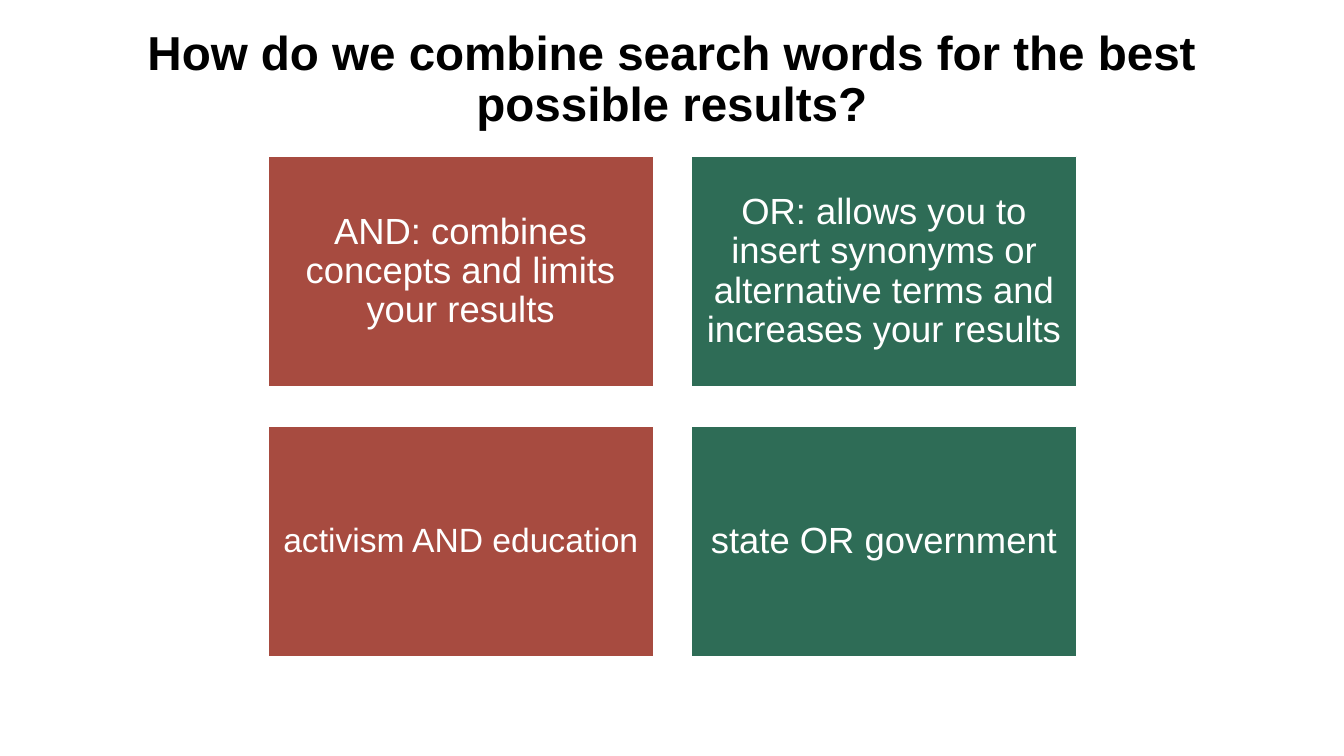
from pptx import Presentation
from pptx.dml.color import RGBColor
from pptx.enum.shapes import MSO_SHAPE as Shape
from pptx.enum.text import MSO_ANCHOR as Anchor, MSO_AUTO_SIZE as AutoSize, PP_ALIGN as Align
from pptx.util import Inches, Pt

BLACK = RGBColor(0x00, 0x00, 0x00)
WHITE = RGBColor(0xFF, 0xFF, 0xFF)
RED = RGBColor(0xA7, 0x4B, 0x40)
GREEN = RGBColor(0x2E, 0x6C, 0x56)

TITLE = "How do we combine search words for the best possible results?"
COLUMN_COLORS = [RED, GREEN]
# Each row holds the text and font size of its cards, left to right.
CARD_ROWS = [
    [("AND: combines concepts and limits your results", 26),
     ("OR: allows you to insert synonyms or alternative terms and increases your results", 26)],
    [("activism AND education", 24), ("state OR government", 26)],
]
CARD_WIDTH, CARD_HEIGHT = 3.82, 2.29
COLUMN_STEP, ROW_STEP = 4.2, 2.68


def write_text(shape, text, size, color, bold=False):
    frame = shape.text_frame
    frame.word_wrap = True
    frame.auto_size = AutoSize.NONE
    frame.vertical_anchor = Anchor.MIDDLE
    para = frame.paragraphs[0]
    para.text = text
    para.alignment = Align.CENTER
    para.line_spacing = 0.9
    para.font.name = "Arial"
    para.font.size = Pt(size)
    para.font.bold = bold
    para.font.color.rgb = color


def place_title(slide, left, top, width, height):
    title = slide.shapes.title
    title.left, title.top = Inches(left), Inches(top)
    title.width, title.height = Inches(width), Inches(height)
    write_text(title, TITLE, 34, BLACK, bold=True)


def add_card(slide, left, top, text, size, color):
    card = slide.shapes.add_shape(Shape.RECTANGLE, Inches(left), Inches(top),
                                  Inches(CARD_WIDTH), Inches(CARD_HEIGHT))
    card.shadow.inherit = False
    card.fill.solid()
    card.fill.fore_color.rgb = color
    card.line.color.rgb = WHITE
    card.line.width = Pt(1)
    frame = card.text_frame
    frame.margin_left = frame.margin_right = Inches(0.1)
    frame.margin_top = frame.margin_bottom = Inches(0.1)
    write_text(card, text, size, WHITE)


def add_card_grid(slide, left, top):
    for row, cards in enumerate(CARD_ROWS):
        for column, (text, size) in enumerate(cards):
            add_card(slide, left + column * COLUMN_STEP, top + row * ROW_STEP,
                     text, size, COLUMN_COLORS[column])


def main():
    deck = Presentation()
    deck.slide_width, deck.slide_height = Inches(13.33), Inches(7.5)
    slide = deck.slides.add_slide(deck.slide_layouts.get_by_name("Title Only"))
    place_title(slide, 0.92, 0.21, 11.49, 1.18)
    add_card_grid(slide, 2.66, 1.55)
    deck.save("out.pptx")


if __name__ == "__main__":
    main()
